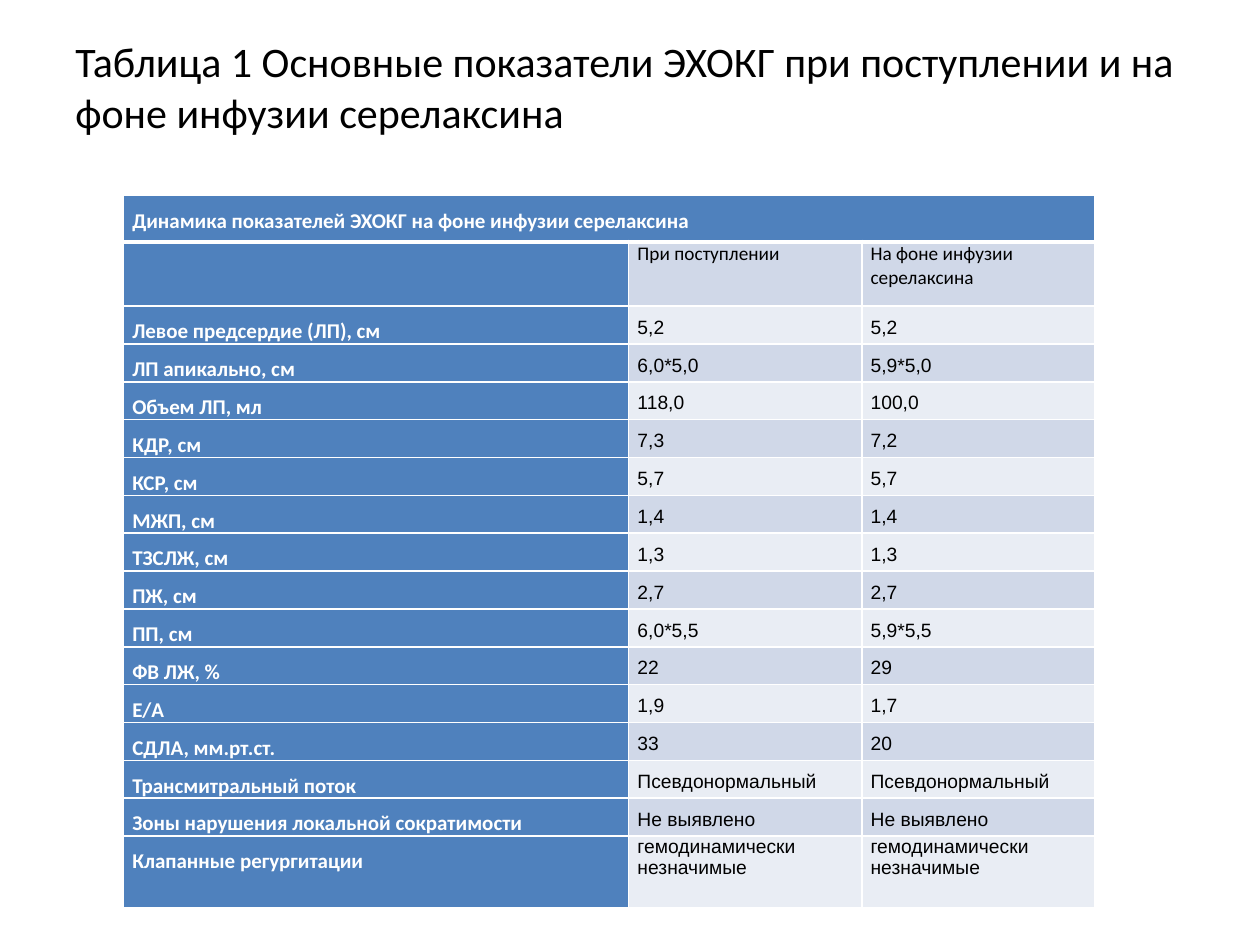
from dataclasses import dataclass

from lxml.etree import SubElement as Sub
from pptx import Presentation
from pptx.dml.color import RGBColor as Rgb
from pptx.enum.text import MSO_ANCHOR as Anchor, PP_ALIGN as Align
from pptx.oxml.ns import qn
from pptx.util import Inches, Pt


@dataclass(frozen=True)
class Theme:
    """Colours, fonts, type sizes and line widths of the slide."""
    white: str = "FFFFFF"
    black: str = "000000"
    blue: str = "4F81BD"
    dark: str = "D0D8E8"
    light: str = "E9EDF4"
    sans: str = "Calibri"
    data: str = "Arial"
    title: int = 24
    label: int = 12
    value: int = 11
    thin: int = 1
    thick: int = 3


THEME = Theme()
TITLE = ("Таблица 1 Основные показатели ЭХОКГ при поступлении "
         "и на фоне инфузии серелаксина")
HEAD = "Динамика показателей ЭХОКГ на фоне инфузии серелаксина"
STAGES = ("", "При поступлении", "На фоне инфузии серелаксина")
ROWS = (
    ("Левое предсердие (ЛП), см", "5,2", "5,2"),
    ("ЛП апикально, см", "6,0*5,0", "5,9*5,0"),
    ("Объем ЛП, мл", "118,0", "100,0"),
    ("КДР, см", "7,3", "7,2"),
    ("КСР, см", "5,7", "5,7"),
    ("МЖП, см", "1,4", "1,4"),
    ("ТЗСЛЖ, см", "1,3", "1,3"),
    ("ПЖ, см", "2,7", "2,7"),
    ("ПП, см", "6,0*5,5", "5,9*5,5"),
    ("ФВ ЛЖ, %", "22", "29"),
    ("Е/А", "1,9", "1,7"),
    ("СДЛА, мм.рт.ст.", "33", "20"),
    ("Трансмитральный поток", "Псевдонормальный", "Псевдонормальный"),
    ("Зоны нарушения локальной сократимости", "Не выявлено", "Не выявлено"),
    ("Клапанные регургитации", "гемодинамически незначимые",
     "гемодинамически незначимые"),
)
WIDTHS = (4.01, 1.85, 1.85)
HEIGHTS = (0.37, 0.51, *[0.3] * (len(ROWS) - 1), 0.57)


def write(frame, text, size, font, color, bold=False, align=None, space=None):
    """Write one run into the first paragraph of a frame."""
    para = frame.paragraphs[0]
    para.alignment = align
    para.line_spacing = space
    run = para.add_run()
    run.text = text
    run.font.size = Pt(size)
    run.font.name = font
    run.font.bold = bold
    run.font.color.rgb = Rgb.from_string(color)


def add_title(slide):
    """Add the slide title."""
    box = slide.shapes.add_textbox(Inches(0.5), Inches(0.14), Inches(9), Inches(1.09))
    frame = box.text_frame
    frame.word_wrap = True
    frame.vertical_anchor = Anchor.MIDDLE
    write(frame, TITLE, THEME.title, THEME.sans, THEME.black, align=Align.LEFT)


def paint(cell, color, top, base):
    """Give a cell its borders and its fill."""
    props = cell._tc.get_or_add_tcPr()
    sides = {"L": THEME.thin, "R": THEME.thin, "T": top, "B": base}
    for side, width in sides.items():
        line = Sub(props, qn(f"a:ln{side}"), w=str(Pt(width)))
        fill = Sub(line, qn("a:solidFill"))
        Sub(fill, qn("a:srgbClr"), val=THEME.white)
    cell.fill.solid()
    cell.fill.fore_color.rgb = Rgb.from_string(color)


def fill_cell(cell, text, row, col):
    """Style and fill a cell by its place in the table."""
    label = row == 0 or col == 0
    band = THEME.dark if row % 2 else THEME.light
    paint(cell, THEME.blue if label else band,
          THEME.thick if row == 1 else THEME.thin,
          THEME.thick if row == 0 else THEME.thin)
    if not text:
        return
    cell.margin_left = cell.margin_right = Inches(0.07)
    cell.margin_top = cell.margin_bottom = 0
    align = Align.LEFT if (row, col) == (1, 2) else Align.JUSTIFY
    if label:
        write(cell.text_frame, text, THEME.label, THEME.sans, THEME.white,
              True, align, 1.5)
    else:
        font = THEME.sans if row == 1 else THEME.data
        space = None if row in (1, len(HEIGHTS) - 1) else 1.5
        write(cell.text_frame, text, THEME.value, font, THEME.black,
              False, align, space)


def add_grid(slide):
    """Add the table of heart scan values."""
    grid = ((HEAD, "", ""), STAGES, *ROWS)
    table = slide.shapes.add_table(
        len(grid), len(WIDTHS), Inches(0.98), Inches(1.55),
        Inches(sum(WIDTHS)), Inches(sum(HEIGHTS))).table
    for part, width in zip(table.columns, WIDTHS):
        part.width = Inches(width)
    for part, height in zip(table.rows, HEIGHTS):
        part.height = Inches(height)
    table.cell(0, 0).merge(table.cell(0, 2))
    for row, texts in enumerate(grid):
        for col, text in enumerate(texts):
            fill_cell(table.cell(row, col), text, row, col)


def main():
    """Build the slide and save it."""
    deck = Presentation()
    deck.slide_width, deck.slide_height = Inches(10), Inches(7.5)
    slide = deck.slides.add_slide(deck.slide_layouts[6])
    add_title(slide)
    add_grid(slide)
    deck.save("out.pptx")


if __name__ == "__main__":
    main()
